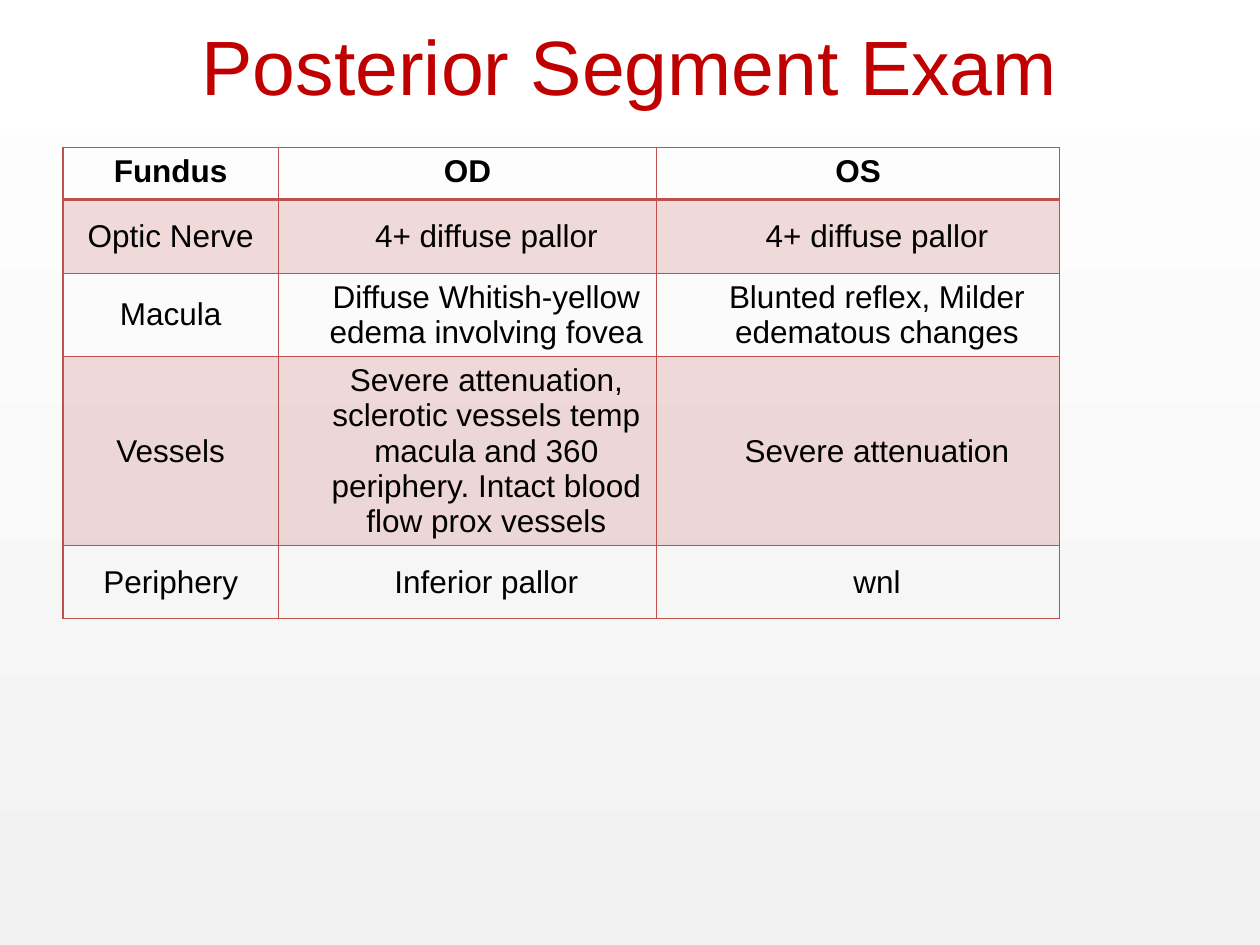
"""Build the posterior segment exam slide with its fundus findings table."""
from lxml.etree import SubElement
from pptx import Presentation
from pptx.dml.color import RGBColor
from pptx.enum.text import MSO_ANCHOR, PP_ALIGN
from pptx.oxml.ns import qn
from pptx.util import Inches, Pt

TITLE_RED = RGBColor(0xC0, 0x00, 0x00)
TABLE_RED = RGBColor(0xC0, 0x50, 0x4D)
BLACK = RGBColor(0x00, 0x00, 0x00)
WHITE = RGBColor(0xFF, 0xFF, 0xFF)
PALE_GREY = RGBColor(0xF2, 0xF2, 0xF2)

FINDINGS = [
    ("Fundus", "OD", "OS"),
    ("Optic Nerve", "4+ diffuse pallor", "4+ diffuse pallor"),
    ("Macula", "Diffuse Whitish-yellow edema involving fovea",
     "Blunted reflex, Milder edematous changes"),
    ("Vessels", "Severe attenuation, sclerotic vessels temp macula and 360 "
     "periphery. Intact blood flow prox vessels", "Severe attenuation"),
    ("Periphery", "Inferior pallor", "wnl"),
]
COLUMN_WIDTHS = [1.71, 3, 3.2]
ROW_HEIGHTS = [0.41, 0.59, 0.58, 0.58, 0.58]


def write(frame, text, size=18, color=BLACK, bold=False):
    paragraph = frame.paragraphs[0]
    paragraph.alignment = PP_ALIGN.CENTER
    run = paragraph.add_run()
    run.text = text
    run.font.name = "Arial"
    run.font.size = Pt(size)
    run.font.bold = bold
    run.font.color.rgb = color


def draw_border(cell, side, points):
    line = SubElement(cell._tc.get_or_add_tcPr(), qn(f"a:ln{side}"), w=str(Pt(points)))
    SubElement(SubElement(line, qn("a:solidFill")), qn("a:srgbClr"), val=str(TABLE_RED))


prs = Presentation()
prs.slide_width, prs.slide_height = Inches(10), Inches(7.5)
slide = prs.slides.add_slide(prs.slide_layouts[5])

backdrop = slide.background.fill
backdrop.gradient()
backdrop.gradient_angle = 90
for stop, color, position in zip(backdrop.gradient_stops, (PALE_GREY, WHITE), (0, 1)):
    stop.color.rgb = color
    stop.position = position

title = slide.shapes.title
title.left, title.top = Inches(0.5), Inches(-0.11)
title.width, title.height = Inches(9), Inches(1.25)
title.text_frame.vertical_anchor = MSO_ANCHOR.MIDDLE
write(title.text_frame, "Posterior Segment Exam", size=44, color=TITLE_RED)

exam = slide.shapes.add_table(len(FINDINGS), len(COLUMN_WIDTHS), Inches(0.5),
                              Inches(1.17), Inches(7.92), Inches(3.88)).table
exam.horz_banding = False
for column, width in zip(exam.columns, COLUMN_WIDTHS):
    column.width = Inches(width)
for row, height in zip(exam.rows, ROW_HEIGHTS):
    row.height = Inches(height)

for r, findings in enumerate(FINDINGS):
    for c, finding in enumerate(findings):
        cell = exam.cell(r, c)
        write(cell.text_frame, finding, bold=r == 0)
        if r > 0:
            cell.vertical_anchor = MSO_ANCHOR.MIDDLE
            if c > 0:
                cell.margin_left = Inches(0.4)
        for side in "LRTB":
            under_header = (r, side) in ((0, "B"), (1, "T"))
            draw_border(cell, side, 2 if under_header else 1)
        if r % 2:
            cell.fill.solid()
            cell.fill.fore_color.rgb = TABLE_RED
            tint = cell._tc.tcPr.find(qn("a:solidFill")).find(qn("a:srgbClr"))
            SubElement(tint, qn("a:alpha"), val="20000")
        else:
            cell.fill.background()

prs.save("out.pptx")
